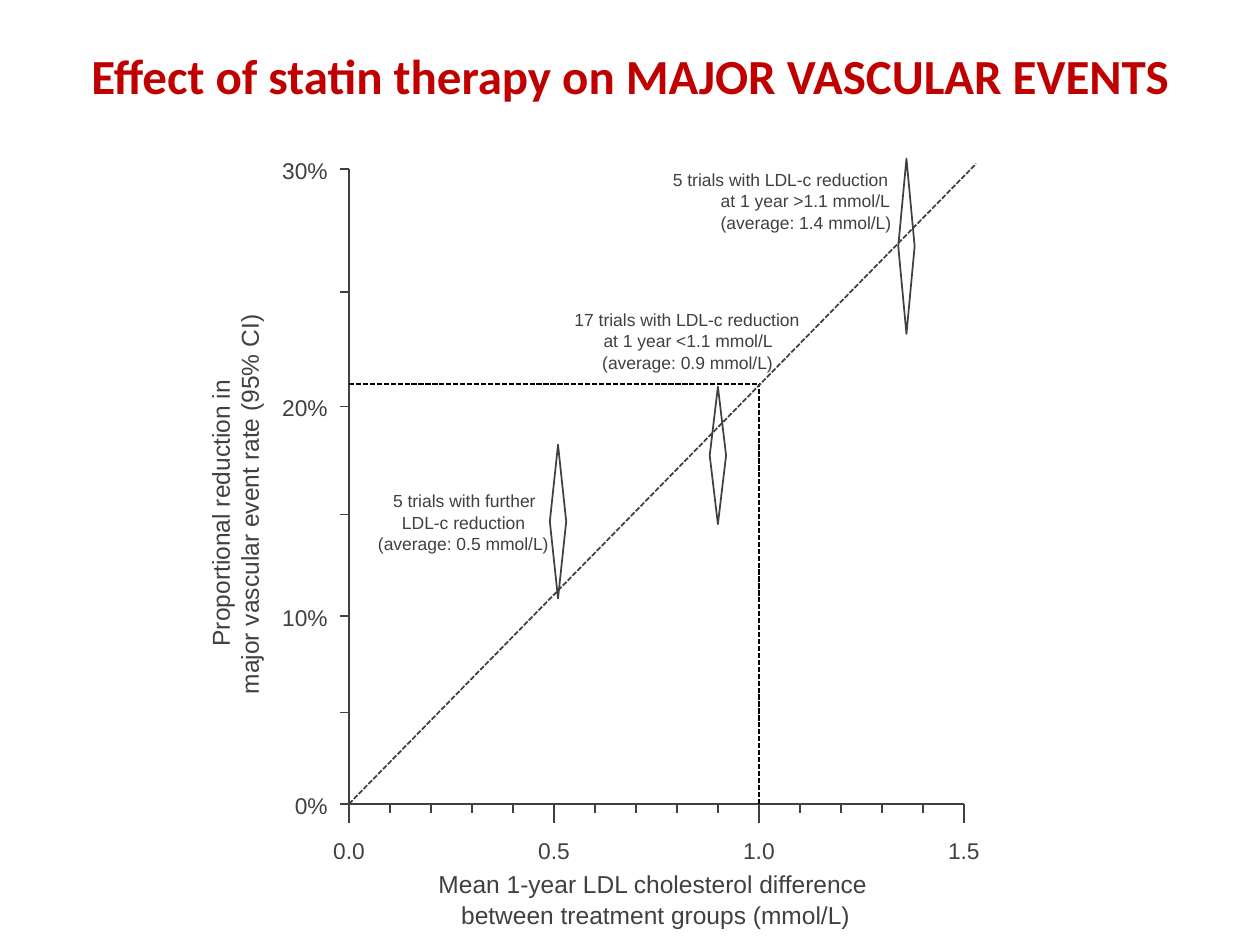
from math import log

from lxml import etree
from pptx import Presentation
from pptx.dml.color import RGBColor
from pptx.enum.dml import MSO_LINE
from pptx.enum.shapes import MSO_CONNECTOR, MSO_SHAPE
from pptx.enum.text import MSO_ANCHOR, MSO_AUTO_SIZE, PP_ALIGN
from pptx.oxml.ns import qn
from pptx.util import Inches, Pt

DASH = MSO_LINE.SQUARE_DOT
STRAIGHT = MSO_CONNECTOR.STRAIGHT
DIAMOND = MSO_SHAPE.DIAMOND
ALIGN_LEFT, ALIGN_CENTER, ALIGN_RIGHT = (
    PP_ALIGN.LEFT, PP_ALIGN.CENTER, PP_ALIGN.RIGHT)
RED = RGBColor(0xC0, 0x00, 0x00)
GRAY = RGBColor(0x40, 0x40, 0x40)
BLACK = RGBColor(0x00, 0x00, 0x00)

# Content: dose in mmol/L, reduction in percent
TITLE = "Effect of statin therapy on MAJOR VASCULAR EVENTS"
X_MAX, Y_MAX = 1.5, 30
X_LABELS = [0.0, 0.5, 1.0, 1.5]
Y_LABELS = [0, 10, 20, 30]
TREND_END = (1.53, 30.2)
REFERENCE = (1.0, 21)
# Dose, lower and upper confidence limit
TRIAL_GROUPS = [(0.51, 10.9, 18.27), (0.9, 14.54, 20.89), (1.36, 23.2, 30.4)]
# Top of the first line, then left, width and wording of each line
TRIAL_LABELS = [
    (3.89, [(3.12, 1.14, "5 trials with further"),
            (3.19, 0.99, "LDL-c reduction"),
            (3.0, 1.37, "(average: 0.5 mmol/L)")]),
    (2.45, [(4.56, 1.8, "17 trials with LDL-c reduction"),
            (4.79, 1.37, "at 1 year <1.1 mmol/L"),
            (4.78, 1.37, "(average: 0.9 mmol/L)")]),
    (1.34, [(5.34, 1.72, "5 trials with LDL-c reduction"),
            (5.72, 1.35, "at 1 year >1.1 mmol/L"),
            (5.72, 1.37, "(average: 1.4 mmol/L)")]),
]
# Left, top, width, rotation, wording
AXIS_TITLES = [
    (3.48, 6.9, 3.41, 0, "Mean 1-year LDL cholesterol difference"),
    (3.66, 7.14, 3.12, 0, "between treatment groups (mmol/L)"),
    (0.69, 3.95, 2.12, 270, "Proportional reduction in"),
    (0.47, 3.88, 3.02, 270, "major vascular event rate (95% CI)"),
]

# Plot area in inches
LEFT, RIGHT, TOP, BOTTOM = 2.77, 7.65, 1.34, 6.38
TICK, LONG_TICK = 0.07, 0.15
DIAMOND_WIDTH = 0.13
LINE_PITCH = 0.17
X_LABEL_WIDTH = 0.3
Y_LABEL_WIDTH, Y_LABEL_RIGHT = 0.42, 2.6


def x_at(dose):
    return LEFT + (RIGHT - LEFT) * dose / X_MAX


def y_at(percent):
    """The vertical scale is logarithmic in the remaining risk."""
    share = log(1 - percent / 100) / log(1 - Y_MAX / 100)
    return BOTTOM - (BOTTOM - TOP) * share


def add_line(page, start, end, color=GRAY, dash=None):
    line = page.shapes.add_connector(
        STRAIGHT, *(Inches(value) for value in (*start, *end)))
    line.line.color.rgb = color
    line.line.width = Pt(1)
    if dash is not None:
        line.line.dash_style = dash
    etree.SubElement(line._element.spPr, qn("a:effectLst"))


def style_outline(shape, color, width):
    shape.shadow.inherit = False
    shape.fill.background()
    shape.line.color.rgb = color
    shape.line.width = Pt(width)


def add_text(page, left, top, width, height, text, size, rotation=0,
             align=ALIGN_LEFT):
    box = page.shapes.add_textbox(
        Inches(left), Inches(top), Inches(width), Inches(height))
    box.rotation = rotation
    frame = box.text_frame
    frame.margin_left = frame.margin_right = 0
    frame.margin_top = frame.margin_bottom = 0
    frame.word_wrap = False
    frame.auto_size = MSO_AUTO_SIZE.SHAPE_TO_FIT_TEXT
    para = frame.paragraphs[0]
    para.text = text
    para.alignment = align
    para.font.name = "Arial"
    para.font.size = Pt(size)
    para.font.color.rgb = GRAY


def add_title(page):
    title = page.shapes.title
    title.left, title.top = 0, Inches(0.31)
    title.width, title.height = Inches(10), Inches(0.99)
    frame = title.text_frame
    frame.vertical_anchor = MSO_ANCHOR.TOP
    frame.word_wrap = True
    frame.auto_size = MSO_AUTO_SIZE.NONE
    para = frame.paragraphs[0]
    para.text = TITLE
    para.alignment = ALIGN_CENTER
    para.font.name = "Calibri"
    para.font.size = Pt(28)
    para.font.bold = True
    para.font.color.rgb = RED


def add_axes(page):
    # Hairline frame under both axes
    builder = page.shapes.build_freeform(Inches(LEFT), Inches(TOP))
    builder.add_line_segments(
        [(Inches(LEFT), Inches(BOTTOM)), (Inches(RIGHT), Inches(BOTTOM))],
        close=False)
    style_outline(builder.convert_to_shape(), BLACK, 0.13)

    add_line(page, (LEFT, BOTTOM), (RIGHT, BOTTOM))
    add_line(page, (LEFT, BOTTOM), (LEFT, TOP))

    # Ticks
    for step in range(16):
        x = x_at(step / 10)
        add_line(page, (x, BOTTOM), (x, BOTTOM + TICK))
    for percent in range(0, Y_MAX + 1, 5):
        y = y_at(percent)
        add_line(page, (LEFT, y), (LEFT - TICK, y))

    # Labelled values
    for dose in X_LABELS:
        x = x_at(dose)
        add_line(page, (x, BOTTOM), (x, BOTTOM + LONG_TICK))
        add_text(page, x - X_LABEL_WIDTH / 2, 6.64, X_LABEL_WIDTH, 0.22,
                 f"{dose:.1f}", 13, align=ALIGN_CENTER)
    for percent in Y_LABELS:
        add_text(page, Y_LABEL_RIGHT - Y_LABEL_WIDTH, y_at(percent) - 0.1,
                 Y_LABEL_WIDTH, 0.22, f"{percent}%", 13, align=ALIGN_RIGHT)

    for left, top, width, rotation, text in AXIS_TITLES:
        add_text(page, left, top, width, 0.24, text, 14, rotation)


def add_trials(page):
    for dose, low, high in TRIAL_GROUPS:
        diamond = page.shapes.add_shape(
            DIAMOND, Inches(x_at(dose) - DIAMOND_WIDTH / 2),
            Inches(y_at(high)), Inches(DIAMOND_WIDTH),
            Inches(y_at(low) - y_at(high)))
        style_outline(diamond, GRAY, 1)
    for top, lines in TRIAL_LABELS:
        for row, (left, width, text) in enumerate(lines):
            add_text(page, left, top + row * LINE_PITCH, width, LINE_PITCH,
                     text, 10)


def add_guides(page):
    x, y = x_at(REFERENCE[0]), y_at(REFERENCE[1])
    add_line(page, (x, BOTTOM), (x, y), BLACK, DASH)
    add_line(page, (LEFT, y), (x, y), BLACK, DASH)
    end = (x_at(TREND_END[0]), y_at(TREND_END[1]))
    add_line(page, (LEFT, BOTTOM), end, GRAY, DASH)


def main():
    deck = Presentation()
    deck.slide_width, deck.slide_height = Inches(10), Inches(7.5)
    page = deck.slides.add_slide(deck.slide_layouts[5])
    add_title(page)
    add_axes(page)
    add_trials(page)
    add_guides(page)
    deck.save("out.pptx")


if __name__ == "__main__":
    main()
